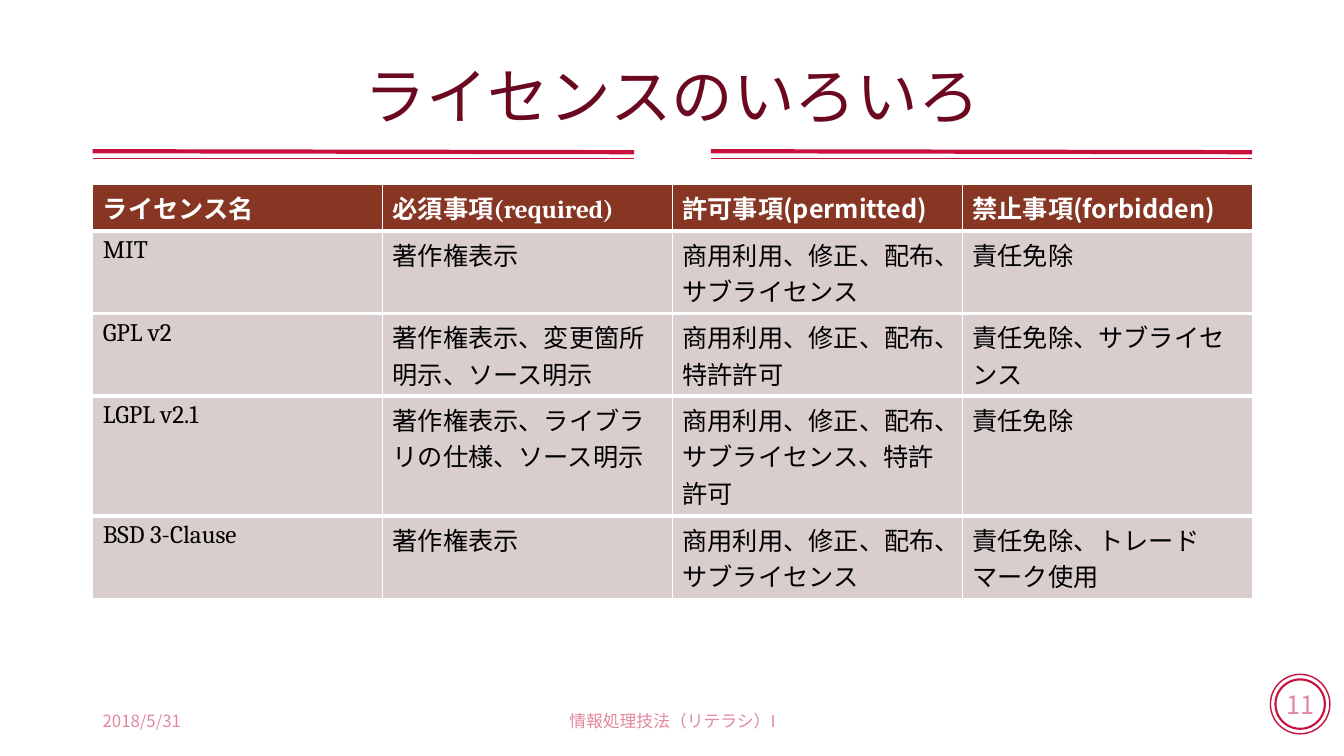
from dataclasses import dataclass

from lxml import etree
from pptx import Presentation
from pptx.dml.color import RGBColor
from pptx.enum.shapes import MSO_CONNECTOR, MSO_SHAPE
from pptx.enum.text import MSO_ANCHOR, PP_ALIGN
from pptx.oxml.ns import qn
from pptx.util import Inches, Pt

OVAL = MSO_SHAPE.OVAL
STRAIGHT = MSO_CONNECTOR.STRAIGHT
MIDDLE = MSO_ANCHOR.MIDDLE
LEFT, CENTER = PP_ALIGN.LEFT, PP_ALIGN.CENTER


@dataclass(frozen=True)
class Theme:
    accent: str = "C8103D"
    title: str = "6B0920"
    header: str = "873624"
    body: str = "D9CECD"
    white: str = "FFFFFF"
    black: str = "000000"
    sans: str = "Noto Sans CJK JP"
    serif: str = "Cambria"
    title_size: int = 44
    table_size: int = 18
    number_size: int = 18
    footer_size: int = 12


THEME = Theme()
WIDTH, HEIGHT = 13.33, 7.5
MARGIN = 0.92
CONTENT = 11.5
ROW_HEIGHTS = [0.46, 0.82, 0.82, 1.19, 0.82]
TITLE_BOX = (MARGIN, 0.4, CONTENT, 1.17)
RULES_BOX = (MARGIN, 1.5, CONTENT, 0.07)
TABLE_BOX = (MARGIN, 1.83, CONTENT, sum(ROW_HEIGHTS))
FOOTER_BOX = (MARGIN, 6.95, CONTENT, 0.4)
BADGE_BOX = (12.6, 6.69, 0.59, 0.59)

LICENSES = [
    ["ライセンス名", "必須事項(required)", "許可事項(permitted)", "禁止事項(forbidden)"],
    ["MIT", "著作権表示", "商用利用、修正、配布、サブライセンス", "責任免除"],
    ["GPL v2", "著作権表示、変更箇所明示、ソース明示",
     "商用利用、修正、配布、特許許可", "責任免除、サブライセンス"],
    ["LGPL v2.1", "著作権表示、ライブラリの仕様、ソース明示",
     "商用利用、修正、配布、サブライセンス、特許許可", "責任免除"],
    ["BSD 3-Clause", "著作権表示", "商用利用、修正、配布、サブライセンス",
     "責任免除、トレードマーク使用"],
]


def inches(box):
    return [Inches(length) for length in box]


def write(frame, text, *, size, color, font=THEME.sans, bold=False,
          align=LEFT, opacity=None, spacing=None):
    paragraph = frame.paragraphs[0]
    paragraph.alignment = align
    if spacing:
        paragraph.line_spacing = spacing
    run = paragraph.add_run()
    run.text = text
    run.font.size = Pt(size)
    run.font.bold = bold
    run.font.name = font
    run.font.color.rgb = RGBColor.from_string(color)
    properties = run._r.get_or_add_rPr()
    etree.SubElement(properties, qn("a:ea"), typeface=THEME.sans)
    if opacity:
        tint = properties.find(".//" + qn("a:srgbClr"))
        etree.SubElement(tint, qn("a:alpha"), val=str(opacity * 1000))


def add_label(slide, box, text, **style):
    frame = slide.shapes.add_textbox(*inches(box)).text_frame
    frame.word_wrap = True
    frame.vertical_anchor = MIDDLE
    write(frame, text, **style)


def add_rules(slide, box):
    left, top, width, height = box
    length = 5.37
    for start in (left + width - length, left):
        for y, drop, weight in ((top, 0.01, 3), (top + height, 0, 1)):
            rule = slide.shapes.add_connector(
                STRAIGHT, *inches((start, y, start + length, y + drop)))
            rule.line.color.rgb = RGBColor.from_string(THEME.accent)
            rule.line.width = Pt(weight)
            etree.SubElement(rule._element.spPr, qn("a:effectLst"))


def add_badge(slide, box, number):
    left, top, width, height = box
    inset = 0.05
    inner = (left + inset, top + inset, width - 2 * inset, height - 2 * inset)
    for ring_box, weight in ((box, 1), (inner, 1.5)):
        ring = slide.shapes.add_shape(OVAL, *inches(ring_box))
        ring.shadow.inherit = False
        ring.fill.background()
        ring.line.color.rgb = RGBColor.from_string(THEME.accent)
        ring.line.width = Pt(weight)
    frame = ring.text_frame
    frame.word_wrap = False
    frame.vertical_anchor = MIDDLE
    write(frame, number, size=THEME.number_size, color=THEME.accent,
          align=CENTER, opacity=50)


def add_footer(slide, box, date, course):
    left, top, width, height = box
    style = dict(size=THEME.footer_size, color=THEME.accent, opacity=50)
    course_width = 4.5
    add_label(slide, (left, top, 3, height), date, **style)
    add_label(slide, (left + (width - course_width) / 2, top, course_width, height),
              course, align=CENTER, **style)


def set_borders(cell, weights):
    properties = cell._tc.get_or_add_tcPr()
    for index, (side, weight) in enumerate(weights.items()):
        border = etree.Element(qn("a:ln" + side), w=str(Pt(weight)))
        fill = etree.SubElement(border, qn("a:solidFill"))
        etree.SubElement(fill, qn("a:srgbClr"), val=THEME.white)
        properties.insert(index, border)


def add_license_table(slide, box, rows):
    table = slide.shapes.add_table(len(rows), len(rows[0]), *inches(box)).table
    table.horz_banding = False
    for column in table.columns:
        column.width = Inches(box[2] / len(rows[0]))
    last = len(rows) - 1
    for r, row in enumerate(rows):
        is_header = r == 0
        table.rows[r].height = Inches(ROW_HEIGHTS[r])
        for c, text in enumerate(row):
            cell = table.cell(r, c)
            cell.fill.solid()
            cell.fill.fore_color.rgb = RGBColor.from_string(
                THEME.header if is_header else THEME.body)
            set_borders(cell, {"L": 1, "R": 1, "T": 1 if is_header else 3,
                               "B": 1 if r == last else 3})
            use_sans = is_header and c >= 2
            write(cell.text_frame, text, size=THEME.table_size, bold=is_header,
                  color=THEME.white if is_header else THEME.black,
                  font=THEME.sans if use_sans else THEME.serif)


def build_license_slide(deck):
    slide = deck.slides.add_slide(deck.slide_layouts[6])
    add_badge(slide, BADGE_BOX, "11")
    add_rules(slide, RULES_BOX)
    add_label(slide, TITLE_BOX, "ライセンスのいろいろ", size=THEME.title_size,
              color=THEME.title, align=CENTER, spacing=0.9)
    add_footer(slide, FOOTER_BOX, "2018/5/31", "情報処理技法（リテラシ）I")
    add_license_table(slide, TABLE_BOX, LICENSES)


def main():
    deck = Presentation()
    deck.slide_width, deck.slide_height = Inches(WIDTH), Inches(HEIGHT)
    build_license_slide(deck)
    deck.save("out.pptx")


if __name__ == "__main__":
    main()
